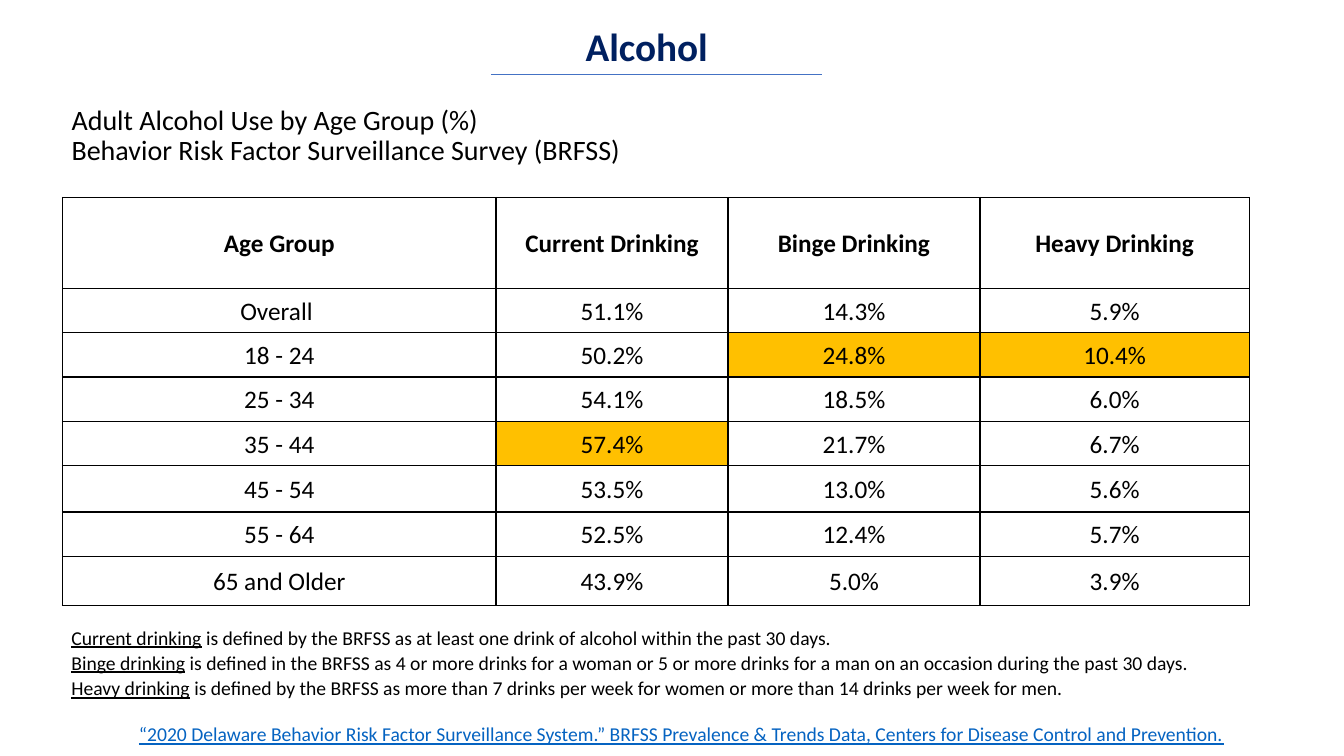
from lxml.etree import SubElement
from pptx import Presentation
from pptx.dml.color import RGBColor
from pptx.enum.shapes import MSO_CONNECTOR as Conn
from pptx.enum.text import MSO_ANCHOR as Anchor, MSO_AUTO_SIZE as Fit, PP_ALIGN as Align
from pptx.oxml.ns import qn
from pptx.util import Inches, Pt


def color(code):
    return RGBColor.from_string(code)


def style(para, size, code="000000", bold=False, space=1.07):
    para.line_spacing = space
    for run in para.runs:
        run.font.name = "Calibri"
        run.font.size = Pt(size)
        run.font.bold = bold
        run.font.color.rgb = color(code)


deck = Presentation()
deck.slide_width, deck.slide_height = Inches(13.33), Inches(7.5)
slide = deck.slides.add_slide(deck.slide_layouts[5])
shapes = slide.shapes

# Table title
title = shapes.title
title.left, title.top = Inches(0.61), Inches(0.86)
title.width, title.height = Inches(11.5), Inches(0.99)
frame = title.text_frame
frame.text = "Adult Alcohol Use by Age Group (%)\vBehavior Risk Factor Surveillance Survey (BRFSS)"
frame.word_wrap = True
frame.auto_size = Fit.NONE
frame.vertical_anchor = Anchor.MIDDLE
frame.paragraphs[0].alignment = Align.LEFT
style(frame.paragraphs[0], 20, space=0.9)

# Topic heading with its rule
topic = shapes.add_textbox(Inches(5.71), Inches(0.17), Inches(1.53), Inches(0.57))
topic.text_frame.text = "Alcohol"
topic.text_frame.word_wrap = True
style(topic.text_frame.paragraphs[0], 28, "002060", True, 1.0)

rule = shapes.add_connector(Conn.STRAIGHT, Inches(4.87), Inches(0.74), Inches(8.15), Inches(0.74))
rule.line.color.rgb = color("4472C4")
rule.line.width = Pt(0.5)
SubElement(rule._element.spPr, qn("a:effectLst"))

# Source citation
cite = shapes.add_textbox(Inches(1.22), Inches(7.1), Inches(11.5), Inches(0.34))
cite.text_frame.text = (
    "“2020 Delaware Behavior Risk Factor Surveillance System.” BRFSS Prevalence "
    "& Trends Data, Centers for Disease Control and Prevention."
)
cite.text_frame.word_wrap = True
para = cite.text_frame.paragraphs[0]
style(para, 14, "0563C1")
para.runs[0].font.underline = True
para._p.get_or_add_pPr().set("marL", str(Inches(0.06)))

# Drinking rates by age
rows = [
    ["Age Group", "Current Drinking", "Binge Drinking", "Heavy Drinking"],
    ["Overall ", "51.1%", "14.3%", "5.9%"],
    ["18 - 24", "50.2%", "24.8%", "10.4%"],
    ["25 - 34", "54.1%", "18.5%", "6.0%"],
    ["35 - 44", "57.4%", "21.7%", "6.7%"],
    ["45 - 54", "53.5%", "13.0%", "5.6%"],
    ["55 - 64", "52.5%", "12.4%", "5.7%"],
    ["65 and Older", "43.9%", "5.0%", "3.9%"],
]
wides = [4.3, 2.3, 2.5, 2.67]
highs = [0.9, 0.44, 0.44, 0.44, 0.44, 0.46, 0.44, 0.49]
peaks = {(2, 2), (2, 3), (4, 1)}  # highest rate in each column

table = shapes.add_table(
    len(rows), len(wides), Inches(0.62), Inches(1.96), Inches(sum(wides)), Inches(sum(highs))
).table
for col, wide in zip(table.columns, wides):
    col.width = Inches(wide)
for row, high in zip(table.rows, highs):
    row.height = Inches(high)

for r, texts in enumerate(rows):
    for c, text in enumerate(texts):
        cell = table.cell(r, c)
        cell.margin_left = cell.margin_right = Inches(0.07)
        cell.margin_top = cell.margin_bottom = 0
        cell.vertical_anchor = Anchor.MIDDLE
        cell.text_frame.text = text
        para = cell.text_frame.paragraphs[0]
        para.alignment = Align.CENTER
        style(para, 18, bold=r == 0)
        for side in ("lnL", "lnR", "lnT", "lnB"):
            edge = SubElement(cell._tc.get_or_add_tcPr(), qn(f"a:{side}"), w=str(Pt(1)))
            SubElement(SubElement(edge, qn("a:solidFill")), qn("a:srgbClr"), val="000000")
        cell.fill.solid()
        cell.fill.fore_color.rgb = color("FFC000" if (r, c) in peaks else "FFFFFF")

# Definitions
terms = [
    ("Current drinking",
     " is defined by the BRFSS as at least one drink of alcohol within the past 30 days."),
    ("Binge drinking",
     " is defined in the BRFSS as 4 or more drinks for a woman or 5 or more drinks "
     "for a man on an occasion during the past 30 days."),
    ("Heavy drinking",
     " is defined by the BRFSS as more than 7 drinks per week for women "
     "or more than 14 drinks per week for men."),
]
notes = shapes.add_textbox(Inches(0.61), Inches(6.14), Inches(11.5), Inches(0.85))
frame = notes.text_frame
frame.word_wrap = True
for i, (term, rest) in enumerate(terms):
    para = frame.add_paragraph() if i else frame.paragraphs[0]
    para.text = term
    para.add_run().text = rest
    style(para, 14)
    para.runs[0].font.underline = True

deck.save("out.pptx")
